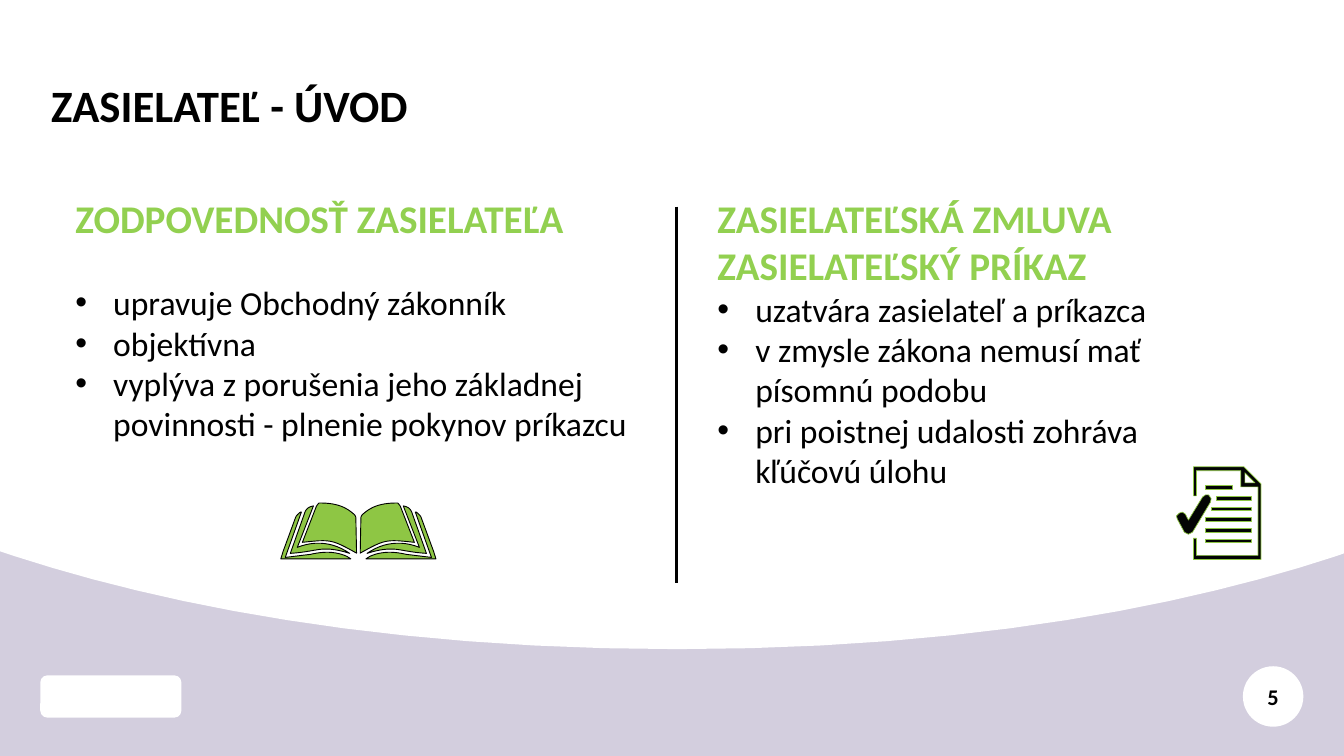
from lxml import etree
from pptx import Presentation
from pptx.dml.color import RGBColor
from pptx.enum.shapes import MSO_CONNECTOR, MSO_SHAPE
from pptx.enum.text import MSO_ANCHOR, PP_ALIGN
from pptx.oxml.ns import qn
from pptx.util import Pt

LINE = MSO_CONNECTOR.STRAIGHT
OVAL = MSO_SHAPE.OVAL
ROUND = MSO_SHAPE.ROUNDED_RECTANGLE
BOTTOM = MSO_ANCHOR.BOTTOM
MIDDLE = MSO_ANCHOR.MIDDLE
CENTER = PP_ALIGN.CENTER

FONT = "Calibri"
BLACK, WHITE, LILAC = "000000", "FFFFFF", "D3CEDE"
LIME, LEAF, INK = "92D050", "8EC644", "030404"
STEPS = 12
SPINE = 256

PANEL = [
    (0, 0), (960, 0), (960, 395.3), (954, 397.4),
    (853.2, 430.6, 698.4, 463.7, 483.8, 463.7),
    (269.3, 463.7, 113, 430.6, 10.8, 397.4), (0, 393.8),
]
PAGES = [
    [(250.6, 399.2), (200.6, 399.2), (202.3, 393.8), (211, 370.1),
     (211.7, 367.9, 213.1, 367.2, 214.6, 365.8), (215.3, 365.8),
     (203.8, 398.2), (210.2, 397.4, 216, 396.7, 221.8, 396),
     (231.1, 393.8, 239.8, 393.8, 247.7, 397.4)],
    [(249.8, 395.3), (242.6, 393.1, 236.2, 391.7, 229, 392.4),
     (223.2, 393.1, 218.2, 394.6, 207.4, 395.3), (217.4, 367.2),
     (218.2, 364.3, 219.6, 362.2, 223.9, 361.4), (212.4, 391),
     (225.4, 385.9, 238.3, 387.4, 249.8, 395.3)],
    [(254.7, 395.1), (236.9, 385.2, 236.2, 385.2, 216, 387.4),
     (226.1, 361.4), (226.8, 360.7, 227.5, 359.3, 228.2, 359.3),
     (237.6, 359.3, 245.5, 360.7, 252.7, 367.2),
     (253.4, 367.9, 254.2, 368.6, 254.2, 370.1)],
]
TICK = [
    (842.4, 366.5), (844.6, 365.8), (846.7, 367.2), (848.9, 371.5),
    (859, 355), (861.1, 353.5), (863.3, 353.5), (865.1, 356),
    (864.7, 358.6), (851.8, 380.2), (848.9, 381.6), (846, 380.2),
    (841, 370.8), (840.3, 368.6),
]
SHEET = [
    (852.5, 354.2), (852.5, 333.4), (888.5, 333.4), (900.7, 345.6),
    (900.7, 399.6), (852.5, 399.6), (852.5, 384.5), (854.6, 384.5),
    (854.6, 396.7), (898.6, 396.7), (898.6, 347.8), (886.3, 347.8),
    (886.3, 336.2), (854.6, 336.2), (854.6, 354.2),
]
FOLD = [(896.4, 344.9), (889.2, 337.7), (889.2, 344.9)]
BARS = [(861.1, 880.6), (869, 893.5), (865.4, 893.5)] + [(861.1, 893.5)] * 3

DUTY = [
    "upravuje Obchodný zákonník",
    "objektívna",
    "vyplýva z porušenia jeho základnej povinnosti - plnenie pokynov príkazcu",
]
DEAL = [
    "uzatvára zasielateľ a príkazca",
    "v zmysle zákona nemusí mať písomnú podobu",
    "pri poistnej udalosti zohráva kľúčovú úlohu",
]


def color(code):
    return RGBColor.from_string(code)


def paint(shape, fill, line=None, width=0):
    shape.shadow.inherit = False
    shape.fill.solid()
    shape.fill.fore_color.rgb = color(fill)
    if line:
        shape.line.color.rgb = color(line)
        shape.line.width = Pt(width)
    else:
        shape.line.fill.background()


def style(para, size, code, bold):
    for run in para.runs:
        run.font.name = FONT
        run.font.size = Pt(size)
        run.font.bold = bold
        run.font.color.rgb = color(code)


def trace(path):
    spots = [path[0]]
    for part in path[1:]:
        if len(part) == 2:
            spots.append(part)
            continue
        nodes = [spots[-1], part[:2], part[2:4], part[4:]]
        for step in range(1, STEPS + 1):
            t = step / STEPS
            mix = ((1 - t) ** 3, 3 * t * (1 - t) ** 2, 3 * t * t * (1 - t), t ** 3)
            spots.append(tuple(sum(m * n[i] for m, n in zip(mix, nodes)) for i in (0, 1)))
    return [(Pt(x), Pt(y)) for x, y in spots]


def outline(slide, paths, fill, line=None, width=0):
    first, *rest = [trace(path) for path in paths]
    pen = slide.shapes.build_freeform(*first[0])
    pen.add_line_segments(first[1:])
    for spots in rest:
        pen.move_to(*spots[0])
        pen.add_line_segments(spots[1:])
    paint(pen.convert_to_shape(), fill, line, width)


def flip(path):
    return [tuple(2 * SPINE - v if i % 2 == 0 else v for i, v in enumerate(part))
            for part in path]


def book(slide):
    for page in PAGES:
        for side in (page, flip(page)):
            outline(slide, [side], LEAF, BLACK, 0.64)


def paper(slide):
    rows = []
    for i, (left, right) in enumerate(BARS):
        top = 347 + 7.6 * i
        rows.append([(left, top), (right, top), (right, top + 2.6), (left, top + 2.6)])
    outline(slide, [TICK, SHEET, FOLD] + rows, INK, LEAF, 0.47)


def box(slide, left, top, width, height):
    frame = slide.shapes.add_textbox(Pt(left), Pt(top), Pt(width), Pt(height)).text_frame
    frame.word_wrap = True
    return frame


def title(slide, text):
    frame = box(slide, 29.5, 28.8, 901.4, 69.1)
    frame.vertical_anchor = BOTTOM
    frame.text = text
    frame.paragraphs[0].line_spacing = 0.85
    style(frame.paragraphs[0], 32, BLACK, True)


def bullet(para):
    props = para._p.get_or_add_pPr()
    props.set("marL", str(Pt(27)))
    props.set("indent", str(-Pt(27)))
    etree.SubElement(props, qn("a:buFont")).set("typeface", "Arial")
    etree.SubElement(props, qn("a:buChar")).set("char", "•")


def column(slide, left, width, height, heads, items, gap=0):
    frame = box(slide, left, 135.4, width, height)
    frame.text = "\n".join(heads + items)
    for i, para in enumerate(frame.paragraphs):
        if i < len(heads):
            style(para, 28, LIME, True)
        else:
            if i == len(heads):
                para.space_before = Pt(gap)
            bullet(para)
            style(para, 24, BLACK, False)


def rule(slide, x, top, bottom):
    line = slide.shapes.add_connector(LINE, Pt(x), Pt(top), Pt(x), Pt(bottom))
    line.line.color.rgb = color(BLACK)
    line.line.width = Pt(2.25)
    etree.SubElement(line._element.spPr, qn("a:effectLst"))


def solid(slide, kind, left, top, width, height):
    shape = slide.shapes.add_shape(kind, Pt(left), Pt(top), Pt(width), Pt(height))
    paint(shape, WHITE)
    return shape


def badge(slide, text):
    frame = solid(slide, OVAL, 887.8, 475.9, 43.2, 43.2).text_frame
    frame.margin_left = frame.margin_right = Pt(3.6)
    frame.vertical_anchor = MIDDLE
    frame.text = text
    frame.paragraphs[0].alignment = CENTER
    style(frame.paragraphs[0], 16, BLACK, True)


def main():
    deck = Presentation()
    deck.slide_width, deck.slide_height = Pt(960), Pt(540)
    slide = deck.slides.add_slide(deck.slide_layouts[6])
    slide.background.fill.solid()
    slide.background.fill.fore_color.rgb = color(LILAC)
    badge(slide, "5")
    outline(slide, [PANEL], WHITE)
    title(slide, "ZASIELATEĽ - ÚVOD")
    column(slide, 46.8, 413.3, 186.5, ["ZODPOVEDNOSŤ ZASIELATEĽA"], DUTY, 29)
    column(slide, 505.4, 395.3, 220.3,
           ["ZASIELATEĽSKÁ ZMLUVA", "ZASIELATEĽSKÝ PRÍKAZ"], DEAL)
    rule(slide, 483.1, 147.6, 416.2)
    solid(slide, ROUND, 28.8, 482.4, 100.8, 30.2)
    book(slide)
    paper(slide)
    deck.save("out.pptx")


if __name__ == "__main__":
    main()
